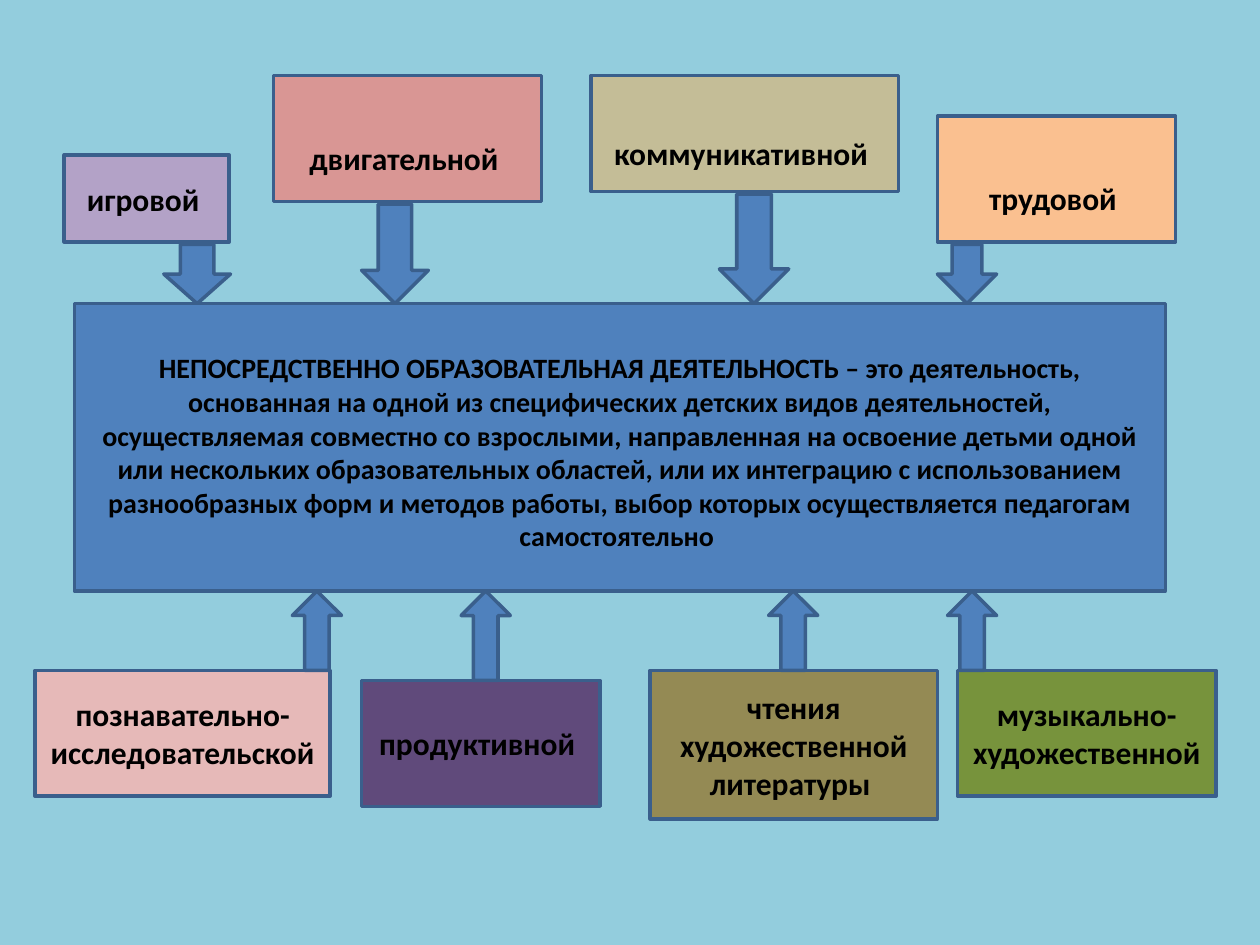
from pptx import Presentation
from pptx.dml.color import RGBColor
from pptx.enum.shapes import MSO_SHAPE
from pptx.enum.text import MSO_ANCHOR, PP_ALIGN
from pptx.util import Inches, Pt

RECTANGLE = MSO_SHAPE.RECTANGLE
DOWN = MSO_SHAPE.DOWN_ARROW
UP = MSO_SHAPE.UP_ARROW
MIDDLE = MSO_ANCHOR.MIDDLE
CENTER = PP_ALIGN.CENTER

COLORS = {
    "background": "93CDDD", "main": "4F81BD", "outline": "3A5F8C", "text": "000000",
    "play": "B3A2C7", "motion": "D99694", "communication": "C4BD97", "labour": "FAC090",
    "research": "E6B9B8", "production": "604A7B", "reading": "948A54", "music": "77933C",
}
FONT = {"name": "Calibri", "bold": True}

DEFINITION = (
    "НЕПОСРЕДСТВЕННО ОБРАЗОВАТЕЛЬНАЯ ДЕЯТЕЛЬНОСТЬ – это деятельность, основанная на одной "
    "из специфических детских видов деятельностей, осуществляемая совместно со взрослыми, "
    "направленная на освоение детьми одной или нескольких образовательных областей, или их "
    "интеграцию с использованием разнообразных форм и методов работы, выбор которых "
    "осуществляется педагогам самостоятельно "
)
MAIN_LEFT, MAIN_TOP, MAIN_WIDTH, MAIN_HEIGHT = 0.59, 2.41, 8.66, 2.28
MAIN_BOTTOM = MAIN_TOP + MAIN_HEIGHT
PLAIN_INSET, LOWERED_INSET = 0.05, 0.35

# text, colour, left, top, width, height, top inset
ACTIVITIES = [
    ("игровой ", "play", 0.51, 1.23, 1.31, 0.69, PLAIN_INSET),
    ("двигательной ", "motion", 2.17, 0.6, 2.13, 1, LOWERED_INSET),
    ("коммуникативной ", "communication", 4.69, 0.6, 2.44, 0.92, LOWERED_INSET),
    ("трудовой ", "labour", 7.44, 0.92, 1.89, 1, LOWERED_INSET),
    ("познавательно-исследовательской ", "research", 0.28, 5.32, 2.34, 1, PLAIN_INSET),
    ("продуктивной ", "production", 2.87, 5.4, 1.89, 1, PLAIN_INSET),
    ("чтения художественной литературы ", "reading", 5.16, 5.32, 2.28, 1.18, PLAIN_INSET),
    ("музыкально-художественной ", "music", 7.6, 5.32, 2.05, 1, PLAIN_INSET),
]
# left, width, length
ARROWS_DOWN = [(7.44, 0.47, 0.47), (1.3, 0.53, 0.47), (2.87, 0.53, 0.79), (5.71, 0.55, 0.87)]
# left, length
ARROWS_UP = [(2.32, 0.63), (3.66, 0.71), (6.1, 0.63), (7.52, 0.63)]
ARROW_UP_WIDTH = 0.39


class Diagram:
    """Holds the slide and the look shared by its boxes and arrows."""

    def __init__(self, slide):
        self.slide = slide
        self.line_width = Pt(2)
        background = slide.background.fill
        background.solid()
        background.fore_color.rgb = self.color("background")

    def color(self, key):
        return RGBColor.from_string(COLORS[key])

    def outlined(self, preset, fill, *place):
        shape = self.slide.shapes.add_shape(preset, *map(Inches, place))
        shape.shadow.inherit = False
        shape.fill.solid()
        shape.fill.fore_color.rgb = self.color(fill)
        shape.line.color.rgb = self.color("outline")
        shape.line.width = self.line_width
        return shape

    def box(self, text, fill, left, top, width, height, inset, size=18):
        """Draw a labelled box; a larger top inset lowers the centred text."""
        frame = self.outlined(RECTANGLE, fill, left, top, width, height).text_frame
        layout = {"word_wrap": True, "vertical_anchor": MIDDLE, "margin_top": Inches(inset)}
        for attribute, value in layout.items():
            setattr(frame, attribute, value)
        paragraph = frame.paragraphs[0]
        paragraph.alignment = CENTER
        label = paragraph.add_run()
        label.text = text
        for attribute, value in {**FONT, "size": Pt(size)}.items():
            setattr(label.font, attribute, value)
        label.font.color.rgb = self.color("text")

    def arrow(self, preset, left, top, width, length):
        self.outlined(preset, "main", left, top, width, length)


def main():
    presentation = Presentation()
    presentation.slide_width, presentation.slide_height = Inches(10), Inches(7.5)
    diagram = Diagram(presentation.slides.add_slide(presentation.slide_layouts[6]))

    diagram.box(DEFINITION, "main", MAIN_LEFT, MAIN_TOP, MAIN_WIDTH, MAIN_HEIGHT, 0.12, size=16)
    for activity in ACTIVITIES:
        diagram.box(*activity)
    for left, width, length in ARROWS_DOWN:
        diagram.arrow(DOWN, left, MAIN_TOP - length, width, length)
    for left, length in ARROWS_UP:
        diagram.arrow(UP, left, MAIN_BOTTOM, ARROW_UP_WIDTH, length)

    presentation.save("out.pptx")


if __name__ == "__main__":
    main()
